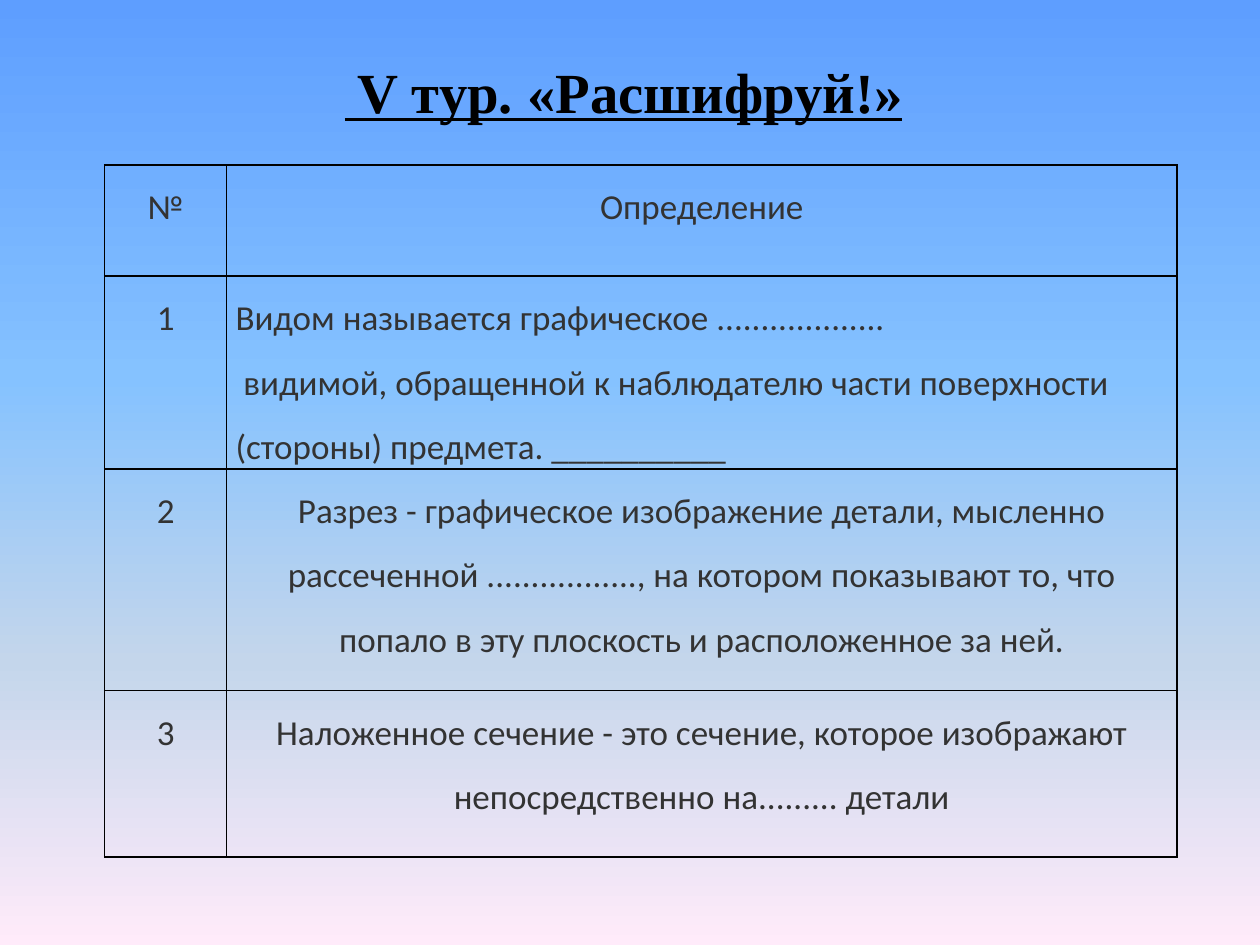
from copy import deepcopy

from lxml import etree
from pptx import Presentation
from pptx import util as u
from pptx.dml.color import RGBColor
from pptx.enum import text
from pptx.oxml.ns import qn

BLACK = RGBColor(0x00, 0x00, 0x00)
GREY = RGBColor(0x33, 0x33, 0x33)
SKY = [
    (0, RGBColor(0x5E, 0x9E, 0xFF)),
    (0.4, RGBColor(0x85, 0xC2, 0xFF)),
    (0.7, RGBColor(0xC4, 0xD6, 0xEB)),
    (1, RGBColor(0xFF, 0xEB, 0xFA)),
]
CENTER, LEFT = text.PP_ALIGN.CENTER, text.PP_ALIGN.LEFT

COLUMNS = (0.97, 7.54)
ROW_HEIGHTS = (0.88, 1.53, 1.76, 1.32)
BLANK = "_" * 10
ROWS = [
    ("№", "Определение", CENTER),
    ("1", "Видом называется графическое ...................\v видимой, обращенной "
          f"к наблюдателю части поверхности (стороны) предмета. {BLANK}", LEFT),
    ("2", "Разрез - графическое изображение детали, мысленно рассеченной "
          "................., на котором показывают то, что попало в эту "
          "плоскость и расположенное за ней.", CENTER),
    ("3", "Наложенное сечение - это сечение, которое изображают "
          "непосредственно на......... детали", CENTER),
]


def paint_background(s):
    fill = s.background.fill
    fill.gradient()
    fill.gradient_angle = 270
    stops = s.element.find(".//" + qn("a:gsLst"))
    while len(stops) < len(SKY):
        stops.append(deepcopy(stops[0]))
    for stop, (position, color) in zip(fill.gradient_stops, SKY):
        stop.position = position
        stop.color.rgb = color


def add_title(s, left, top, width, height):
    sp = s.shapes.title
    sp.left, sp.top, sp.width, sp.height = map(u.Inches, (left, top, width, height))
    tf = sp.text_frame
    tf.vertical_anchor = text.MSO_ANCHOR.TOP
    tf.margin_top = u.Inches(0.22)
    tf.text = " V тур. «Расшифруй!»"
    p = tf.paragraphs[0]
    p.alignment = CENTER
    font = p.runs[0].font
    font.name, font.size = "Times New Roman", u.Pt(32.4)
    font.bold = font.underline = True
    font.color.rgb = BLACK


def set_borders(cell):
    """Draw a thin black line on all four sides, ahead of the cell's fill."""
    tc_pr = cell._tc.get_or_add_tcPr()
    for i, side in enumerate(("lnL", "lnR", "lnT", "lnB")):
        ln = etree.Element(qn("a:" + side), w=str(u.Pt(1)))
        solid = etree.SubElement(ln, qn("a:solidFill"))
        etree.SubElement(solid, qn("a:srgbClr"), val=str(BLACK))
        tc_pr.insert(i, ln)


def fill_cell(cell, words, alignment):
    cell.fill.background()
    set_borders(cell)
    cell.margin_left = cell.margin_right = u.Inches(0.07)
    cell.margin_top = cell.margin_bottom = 0
    cell.text_frame.text = words
    p = cell.text_frame.paragraphs[0]
    p.alignment, p.line_spacing = alignment, 1.5
    for r in p.runs:
        r.font.name, r.font.size = "Calibri", u.Pt(20)
        r.font.color.rgb = GREY


def add_definitions(s, left, top):
    frame = s.shapes.add_table(
        len(ROWS), len(COLUMNS), u.Inches(left), u.Inches(top),
        u.Inches(sum(COLUMNS)), u.Inches(sum(ROW_HEIGHTS)))
    table = frame.table
    table.first_row = table.horz_banding = False
    for column, width in zip(table.columns, COLUMNS):
        column.width = u.Inches(width)
    for i, (number, definition, alignment) in enumerate(ROWS):
        table.rows[i].height = u.Inches(ROW_HEIGHTS[i])
        fill_cell(table.cell(i, 0), number, CENTER)
        fill_cell(table.cell(i, 1), definition, alignment)


def main():
    prs = Presentation()
    prs.slide_width, prs.slide_height = u.Inches(10), u.Inches(7.5)
    s = prs.slides.add_slide(prs.slide_layouts.get_by_name("Title Only"))
    paint_background(s)
    add_title(s, 0.7, 0.23, 8.5, 1.56)
    add_definitions(s, 0.83, 1.31)
    prs.save("out.pptx")


if __name__ == "__main__":
    main()
